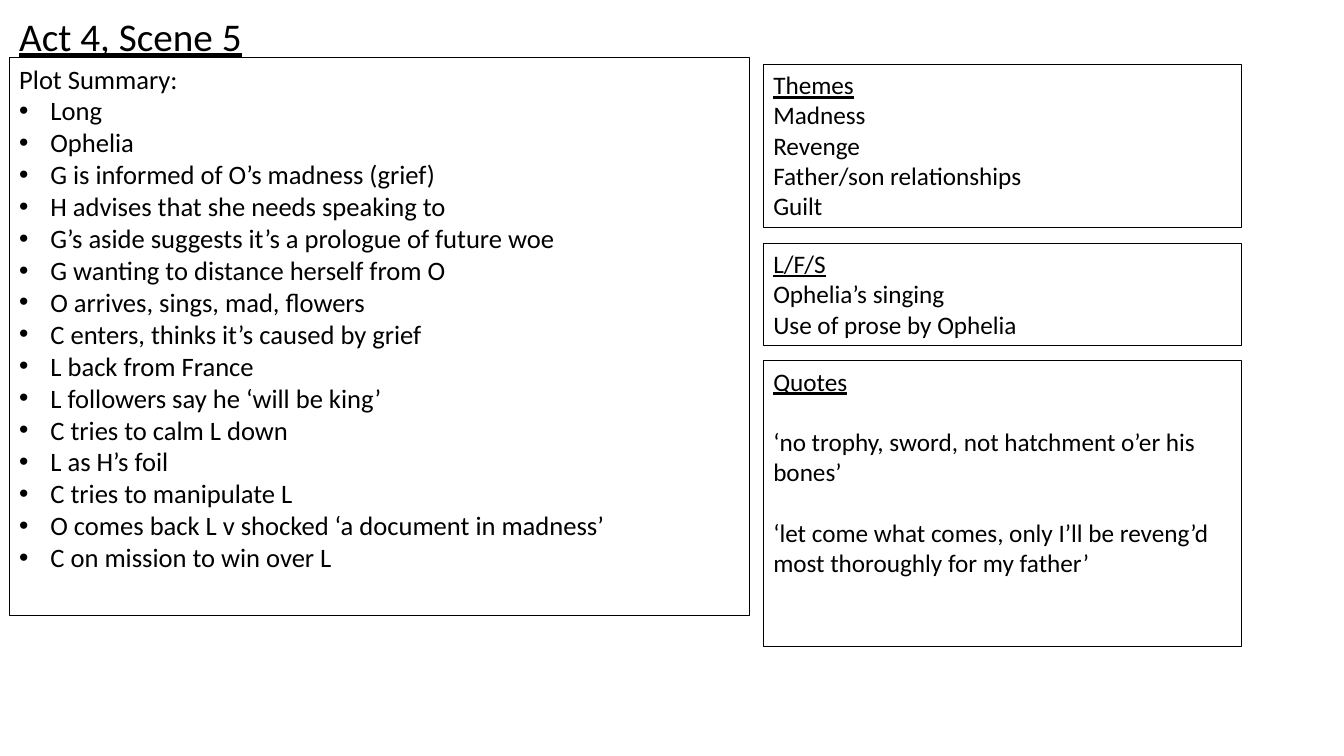
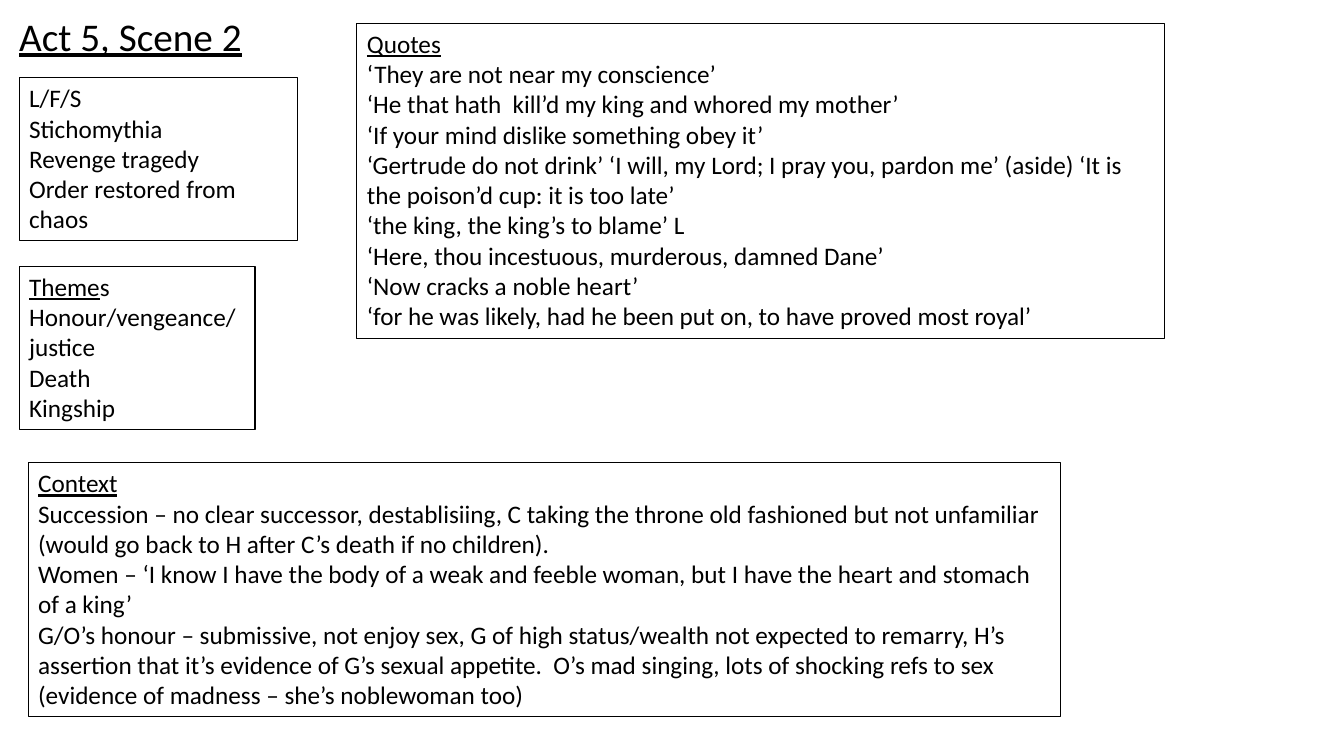
from lxml import etree
from pptx import Presentation
from pptx.dml.color import RGBColor
from pptx.enum.text import MSO_ANCHOR, MSO_AUTO_SIZE, PP_ALIGN
from pptx.oxml.ns import qn
from pptx.util import Inches, Pt

TOP, LEFT, FIXED = MSO_ANCHOR.TOP, PP_ALIGN.LEFT, MSO_AUTO_SIZE.NONE
WIDTH, HEIGHT = Inches(13.33), Inches(7.5)
COLORS = {"ink": "000000"}
INK = RGBColor.from_string(COLORS["ink"])
FONT = "Calibri"
SIZES = {"title": 28, "plot": 19, "panel": 18}
INDENT = Inches(0.31)
FRAME = {"vertical_anchor": TOP, "auto_size": FIXED, "word_wrap": True}
PARA = {"alignment": LEFT, "space_before": Pt(0), "space_after": Pt(0)}

# Boxes are left, top, width, height in percent of the slide.
TITLE_BOX = (0.68, 0.93, 18.3, 7.6)
PLOT_BOX = (0.68, 7.6, 55.06, 73.87)
SIDE = {"left": 56.8, "top": 8.53, "width": 35.56, "gap": 2.07}

PLOT = [
    "Long",
    "Ophelia",
    "G is informed of O’s madness (grief)",
    "H advises that she needs speaking to",
    "G’s aside suggests it’s a prologue of future woe",
    "G wanting to distance herself from O",
    "O arrives, sings, mad, flowers",
    "C enters, thinks it’s caused by grief",
    "L back from France",
    "L followers say he ‘will be king’",
    "C tries to calm L down",
    "L as H’s foil",
    "C tries to manipulate L",
    "O comes back L v shocked ‘a document in madness’",
    "C on mission to win over L",
]

# Height, heading, lines, space before each line.
SIDE_PANELS = [
    (21.6, "Themes", ["Madness", "Revenge", "Father/son relationships", "Guilt"], 0),
    (13.47, "L/F/S", ["Ophelia’s singing", "Use of prose by Ophelia"], 0),
    (37.73, "Quotes", [
        "‘no trophy, sword, not hatchment o’er his bones’",
        "‘let come what comes, only I’ll be reveng’d most thoroughly for my father’",
    ], 21.6),
]

# Box, underlined heading, plain rest of heading, lines.
FINAL_PANELS = [
    ((1.43, 35.2, 17.55, 21.6), "Theme", "s",
     ["Honour/vengeance/justice", "Death", "Kingship"]),
    ((1.43, 10.27, 20.71, 21.6), "", "L/F/S",
     ["Stichomythia", "Revenge tragedy", "Order restored from chaos"]),
    ((26.56, 3.07, 60.09, 41.73), "Quotes", "", [
        "‘They are not near my conscience’",
        "‘He that hath  kill’d my king and whored my mother’",
        "‘If your mind dislike something obey it’",
        "‘Gertrude do not drink’ ‘I will, my Lord; I pray you, pardon me’ (aside) "
        "‘It is the poison’d cup: it is too late’",
        "‘the king, the king’s to blame’ L",
        "‘Here, thou incestuous, murderous, damned Dane’",
        "‘Now cracks a noble heart’",
        "‘for he was likely, had he been put on, to have proved most royal’",
    ]),
    ((2.1, 61.2, 76.82, 33.6), "Context", "", [
        "Succession – no clear successor, destablisiing, C taking the throne old fashioned "
        "but not unfamiliar (would go back to H after C’s death if no children).",
        "Women – ‘I know I have the body of a weak and feeble woman, but I have the heart "
        "and stomach of a king’",
        "G/O’s honour – submissive, not enjoy sex, G of high status/wealth not expected to "
        "remarry, H’s assertion that it’s evidence of G’s sexual appetite.  O’s mad singing, "
        "lots of shocking refs to sex (evidence of madness – she’s noblewoman too)",
    ]),
]


def assign(target, values):
    for name, value in values.items():
        setattr(target, name, value)


def to_emu(box):
    left, top, width, height = box
    return (int(WIDTH * left / 100), int(HEIGHT * top / 100),
            int(WIDTH * width / 100), int(HEIGHT * height / 100))


def place(shape, box):
    assign(shape, dict(zip(("left", "top", "width", "height"), to_emu(box))))
    assign(shape.text_frame, FRAME)


def outline(shape):
    shape.line.color.rgb = INK
    shape.line.width = Pt(0.75)


def add_line(frame, first, size, text, under="", gap=0):
    """Write one paragraph: an underlined part, then a plain part."""
    para = frame.paragraphs[0] if first else frame.add_paragraph()
    assign(para, PARA)
    para.space_before = Pt(gap)
    for part, lined in ((under, True), (text, False)):
        if part:
            run = para.add_run()
            run.text = part
            assign(run.font, {"name": FONT, "size": Pt(size), "underline": lined})
            run.font.color.rgb = INK
    return para


def set_bullet(para, shown):
    props = para._p.get_or_add_pPr()
    props.set("marL", str(INDENT if shown else 0))
    props.set("indent", str(-INDENT if shown else 0))
    if shown:
        etree.SubElement(props, qn("a:buFont")).set("typeface", "Arial")
        etree.SubElement(props, qn("a:buChar")).set("char", "•")
    else:
        etree.SubElement(props, qn("a:buNone"))


def add_title(slide, text):
    title = slide.shapes.title
    place(title, TITLE_BOX)
    title.text_frame.word_wrap = False
    add_line(title.text_frame, True, SIZES["title"], "", text)


def add_plot(slide, box):
    body = slide.placeholders[1]
    place(body, box)
    outline(body)
    for i, text in enumerate(["Plot Summary:"] + PLOT):
        para = add_line(body.text_frame, i == 0, SIZES["plot"], text)
        set_bullet(para, i > 0)


def add_panel(slide, box, head, rest, lines, gap=0):
    panel = slide.shapes.add_textbox(*to_emu(box))
    place(panel, box)
    outline(panel)
    add_line(panel.text_frame, True, SIZES["panel"], rest, head)
    for text in lines:
        add_line(panel.text_frame, False, SIZES["panel"], text, gap=gap)


def add_side(slide, left, top, width, gap):
    """Stack the side panels downwards with equal gaps."""
    for height, head, lines, space in SIDE_PANELS:
        add_panel(slide, (left, top, width, height), head, "", lines, space)
        top += height + gap


def build_plot_slide(deck):
    slide = deck.slides.add_slide(deck.slide_layouts[1])
    add_title(slide, "Act 4, Scene 5")
    add_plot(slide, PLOT_BOX)
    add_side(slide, **SIDE)


def build_final_slide(deck):
    slide = deck.slides.add_slide(deck.slide_layouts[5])
    add_title(slide, "Act 5, Scene 2")
    for panel in FINAL_PANELS:
        add_panel(slide, *panel)


def main():
    deck = Presentation()
    assign(deck, {"slide_width": WIDTH, "slide_height": HEIGHT})
    build_plot_slide(deck)
    build_final_slide(deck)
    deck.save("out.pptx")


if __name__ == "__main__":
    main()
